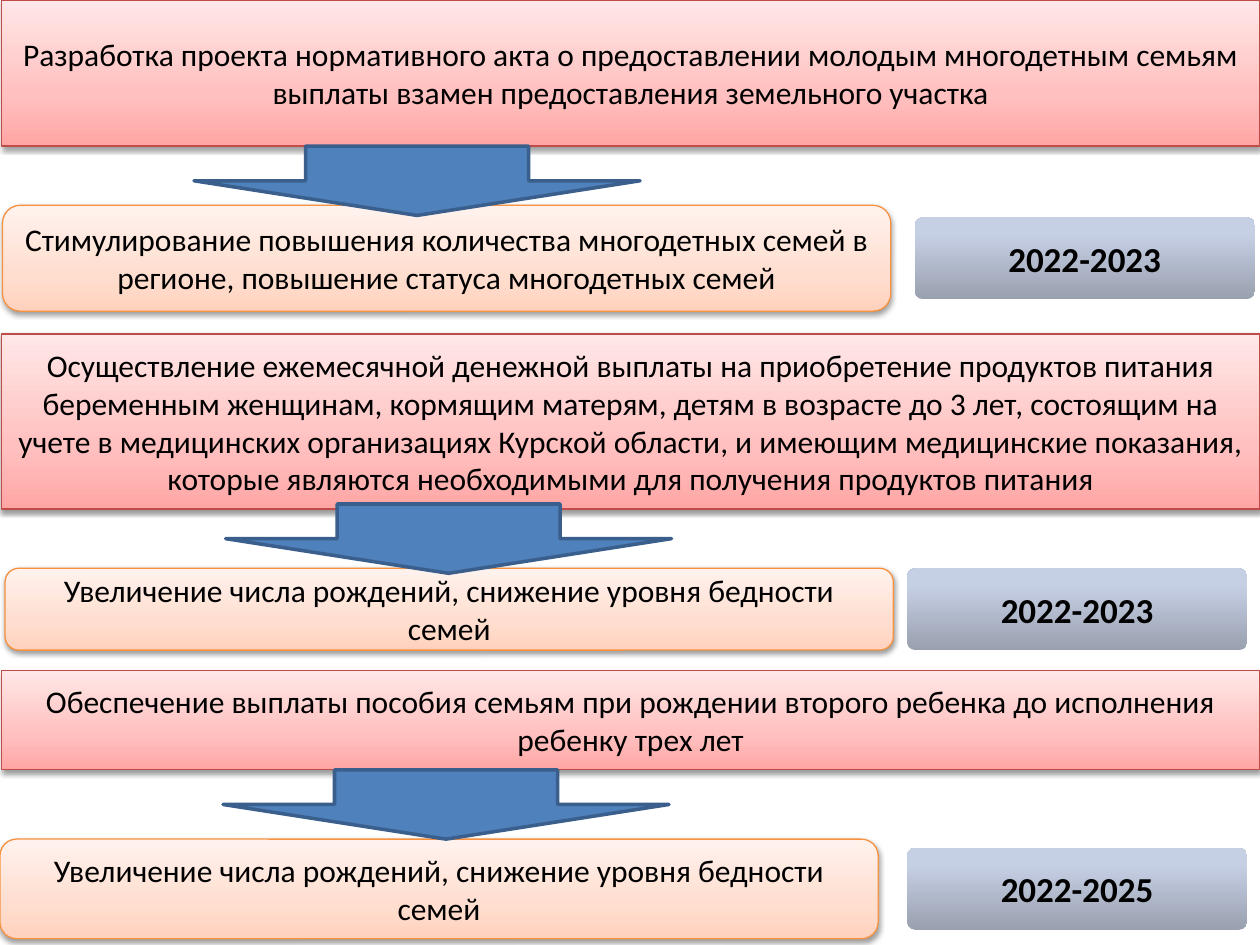
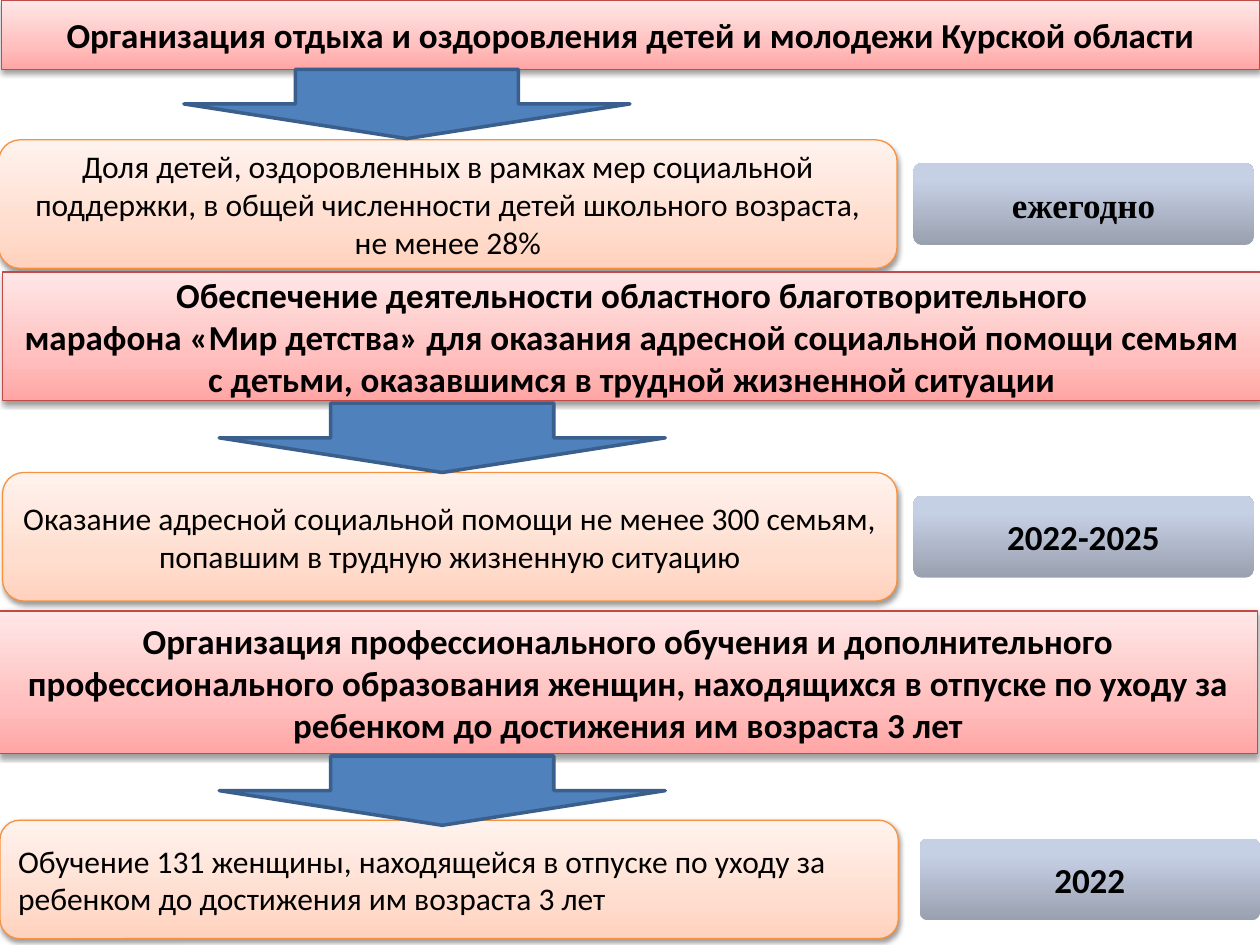
from dataclasses import dataclass

from lxml import etree
from pptx import Presentation
from pptx.dml.color import RGBColor
from pptx.enum.shapes import MSO_SHAPE
from pptx.enum.text import MSO_ANCHOR, PP_ALIGN
from pptx.oxml.ns import qn
from pptx.util import Inches, Pt

RECTANGLE = MSO_SHAPE.RECTANGLE
ROUNDED = MSO_SHAPE.ROUNDED_RECTANGLE
DOWN_ARROW = MSO_SHAPE.DOWN_ARROW
CENTER, LEFT = PP_ALIGN.CENTER, PP_ALIGN.LEFT
MIDDLE = MSO_ANCHOR.MIDDLE
BLANK_LAYOUT = 6


@dataclass(frozen=True)
class Theme:
    """Gradients list (percent, colour) stops from bottom to top."""
    font: str = "Calibri"
    serif: str = "Times New Roman"
    text: str = "000000"
    body_size: int = 18
    strong_size: int = 20
    banner_fill: tuple = ((0, "FFA6A5"), (35, "FFC0BF"), (100, "FFE7E7"))
    banner_line: str = "BF4C48"
    result_fill: tuple = ((0, "FFD2BD"), (35, "FFDED0"), (100, "FFF2ED"))
    result_line: str = "F69240"
    period_fill: tuple = ((0, "99A0B0"), (80, "C6D0E4"), (100, "C6D1E6"))
    arrow_fill: str = "4F81BD"
    arrow_line: str = "3A5F8C"
    shadow: str = "000000"
    thin: float = 0.75
    thick: float = 2


@dataclass(frozen=True)
class Measure:
    """One measure, its expected result and its period; boxes in inches."""
    title: tuple
    title_box: tuple
    result: str
    result_box: tuple
    period: str
    period_left: float
    arrow_at: tuple
    result_align: PP_ALIGN = CENTER
    period_font: str = Theme.font


BIRTHS = "Увеличение числа рождений, снижение уровня бедности семей"

FAMILY_PAYMENTS = (
    Measure(
        ("Разработка проекта нормативного акта о предоставлении молодым "
         "многодетным семьям выплаты взамен предоставления земельного участка",),
        (0.01, 0, 9.99, 1.16),
        "Стимулирование повышения количества многодетных семей в регионе, "
        "повышение статуса многодетных семей",
        (0.02, 1.63, 7.05, 0.84), "2022-2023", 7.26, (1.54, 1.16)),
    Measure(
        ("Осуществление ежемесячной денежной выплаты на приобретение продуктов "
         "питания беременным женщинам, кормящим матерям, детям в возрасте до "
         "3 лет, состоящим на учете в медицинских организациях Курской области, "
         "и имеющим медицинские показания, которые являются необходимыми для "
         "получения продуктов питания",),
        (0.01, 2.65, 9.99, 1.39),
        BIRTHS, (0.04, 4.51, 7.05, 0.65), "2022-2023", 7.2, (1.79, 4)),
    Measure(
        ("Обеспечение выплаты пособия семьям при рождении второго ребенка до "
         "исполнения ребенку трех лет",),
        (0.01, 5.32, 9.99, 0.79),
        BIRTHS, (0, 6.66, 6.97, 0.79), "2022-2025", 7.2, (1.77, 6.11)),
)

FAMILY_SUPPORT = (
    Measure(
        ("Организация отдыха и оздоровления детей и молодежи Курской области",),
        (0.01, 0, 9.99, 0.55),
        "Доля детей, оздоровленных в рамках мер социальной поддержки, в общей "
        "численности детей школьного возраста, не менее 28%",
        (-0.01, 1.11, 7.13, 1.02), "ежегодно", 7.25, (1.46, 0.55),
        period_font=Theme.serif),
    Measure(
        ("Обеспечение деятельности областного благотворительного",
         "марафона «Мир детства» для оказания адресной социальной помощи семьям "
         "с детьми, оказавшимся в трудной жизненной ситуации"),
        (0.02, 2.16, 9.99, 1.02),
        "Оказание адресной социальной помощи не менее 300 семьям, попавшим в "
        "трудную жизненную ситуацию",
        (0.02, 3.75, 7.1, 1.02), "2022-2025", 7.25, (1.74, 3.2)),
    Measure(
        ("Организация профессионального обучения и дополнительного "
         "профессионального образования женщин, находящихся в отпуске по уходу "
         "за ребенком до достижения им возраста 3 лет",),
        (-0.01, 4.85, 9.99, 1.13),
        "Обучение 131 женщины, находящейся в отпуске по уходу за ребенком до "
        "достижения им возраста 3 лет",
        (0, 6.51, 7.13, 0.94), "2022", 7.3, (1.74, 6), result_align=LEFT),
)


def add_color(parent, color):
    return etree.SubElement(parent, qn("a:srgbClr"), val=color)


class SlideBuilder:
    def __init__(self, presentation, theme):
        self.presentation = presentation
        self.theme = theme
        self.slide = None

    def new_slide(self):
        layout = self.presentation.slide_layouts[BLANK_LAYOUT]
        self.slide = self.presentation.slides.add_slide(layout)

    def shape(self, kind, box, fill, line=None, width=Theme.thin):
        shape = self.slide.shapes.add_shape(kind, *map(Inches, box))
        shape.shadow.inherit = False
        if isinstance(fill, str):
            shape.fill.solid()
            shape.fill.fore_color.rgb = RGBColor.from_string(fill)
        else:
            self.gradient(shape, fill)
        if line:
            shape.line.color.rgb = RGBColor.from_string(line)
            shape.line.width = Pt(width)
        else:
            shape.line.fill.background()
        return shape

    def gradient(self, shape, stops):
        shape.fill.gradient()
        shape.fill.gradient_angle = 90
        stop_list = next(shape._element.spPr.iter(qn("a:gsLst")))
        for stop in list(stop_list):
            stop_list.remove(stop)
        for percent, color in stops:
            stop = etree.SubElement(stop_list, qn("a:gs"), pos=str(percent * 1000))
            add_color(stop, color)

    def drop_shadow(self, shape):
        effects = shape._element.spPr.find(qn("a:effectLst"))
        shadow = etree.SubElement(
            effects, qn("a:outerShdw"), blurRad=str(Pt(3.1)), dist=str(Pt(1.6)),
            dir="5400000", rotWithShape="0")
        color = add_color(shadow, self.theme.shadow)
        etree.SubElement(color, qn("a:alpha"), val="38000")

    def add_text(self, shape, lines, size, bold=False, align=CENTER, font=Theme.font):
        frame = shape.text_frame
        frame.word_wrap = True
        frame.vertical_anchor = MIDDLE
        for index, line in enumerate(lines):
            paragraph = frame.add_paragraph() if index else frame.paragraphs[0]
            paragraph.alignment = align
            run = paragraph.add_run()
            run.text = line
            run.font.name = font
            run.font.size = Pt(size)
            run.font.bold = bold
            run.font.color.rgb = RGBColor.from_string(self.theme.text)

    def banner(self, lines, box, bold):
        theme = self.theme
        shape = self.shape(RECTANGLE, box, theme.banner_fill, theme.banner_line)
        self.drop_shadow(shape)
        size = theme.strong_size if bold else theme.body_size
        self.add_text(shape, lines, size, bold)

    def result(self, text, box, align):
        theme = self.theme
        shape = self.shape(ROUNDED, box, theme.result_fill, theme.result_line)
        self.drop_shadow(shape)
        self.add_text(shape, [text], theme.body_size, align=align)

    def period(self, text, left, middle, font):
        width, height = 2.7, 0.65
        box = (left, middle - height / 2, width, height)
        shape = self.shape(ROUNDED, box, self.theme.period_fill)
        shape.adjustments[0] = 0.1
        self.add_text(shape, [text], self.theme.strong_size, True, font=font)

    def arrow(self, left, top):
        theme = self.theme
        self.shape(DOWN_ARROW, (left, top, 3.54, 0.55), theme.arrow_fill,
                   theme.arrow_line, theme.thick)

    def measure(self, measure, bold_title):
        _, top, _, height = measure.result_box
        self.result(measure.result, measure.result_box, measure.result_align)
        self.banner(measure.title, measure.title_box, bold_title)
        self.period(measure.period, measure.period_left, top + height / 2,
                    measure.period_font)
        self.arrow(*measure.arrow_at)


def main():
    presentation = Presentation()
    presentation.slide_width = Inches(10)
    presentation.slide_height = Inches(7.5)
    builder = SlideBuilder(presentation, Theme())
    for measures, bold_title in ((FAMILY_PAYMENTS, False), (FAMILY_SUPPORT, True)):
        builder.new_slide()
        for measure in measures:
            builder.measure(measure, bold_title)
    presentation.save("out.pptx")


if __name__ == "__main__":
    main()
